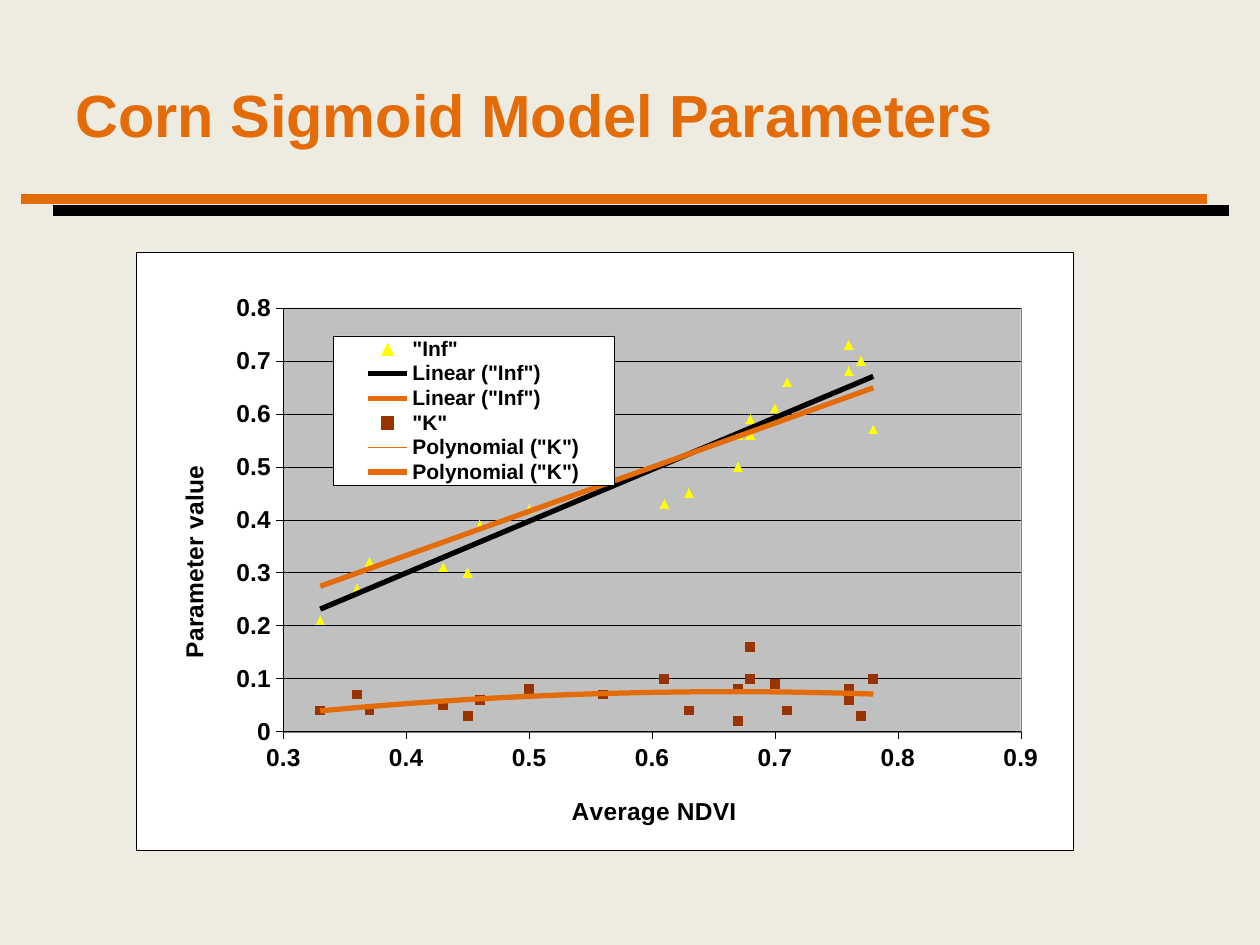
from lxml import etree
from pptx import Presentation
from pptx import util as u
from pptx.chart.data import XyChartData
from pptx.dml.color import RGBColor
from pptx.enum import chart as ch, shapes, text
from pptx.oxml import parse_xml
from pptx.oxml.ns import nsdecls, qn

COLORS = {"paper": "EEECE1", "orange": "E36C09", "black": "000000", "white": "FFFFFF",
          "plot": "C0C0C0", "edge": "808080", "yellow": "FFFF00", "rust": "993300"}
FONT = "Arial"
HAIRLINE = 0.25

NDVI = [0.33, 0.36, 0.37, 0.43, 0.45, 0.46, 0.5, 0.56, 0.61, 0.63,
        0.67, 0.67, 0.68, 0.68, 0.7, 0.71, 0.76, 0.76, 0.77, 0.78]
INF = [0.21, 0.27, 0.32, 0.31, 0.3, 0.39, 0.42, 0.52, 0.43, 0.45,
       0.56, 0.5, 0.56, 0.59, 0.61, 0.66, 0.68, 0.73, 0.7, 0.57]
K = [0.04, 0.07, 0.04, 0.05, 0.03, 0.06, 0.08, 0.07, 0.1, 0.04,
     0.02, 0.08, 0.16, 0.1, 0.09, 0.04, 0.06, 0.08, 0.03, 0.1]

# Trend lines: colour, width, type, settings of that type
LINEAR = [("black", 3, "linear", {}), ("orange", 3, "linear", {"intercept": 0})]
CURVES = [("orange", width, "poly", {"order": 2}) for width in (0.75, 3)]
SERIES = [('"Inf"', INF, "TRIANGLE", "yellow", LINEAR),
          ('"K"', K, "SQUARE", "rust", CURVES)]


def rgb(name):
    return RGBColor.from_string(COLORS[name])


def style_font(font, size, color="black"):
    font.name, font.size, font.bold = FONT, u.Pt(size), True
    font.color.rgb = rgb(color)


def style_line(line, color, width):
    line.color.rgb = rgb(color)
    line.width = u.Pt(width)


def chart_format(line, width, fill=None):
    """Shape properties for chart parts that have no public format."""
    def solid(name):
        return f'<a:solidFill><a:srgbClr val="{COLORS[name]}"/></a:solidFill>'
    inside = solid(fill) if fill else ""
    return parse_xml(f'<c:spPr {nsdecls("c", "a")}>{inside}'
                     f'<a:ln w="{u.Pt(width)}">{solid(line)}</a:ln></c:spPr>')


def layout(x, y, width=None, height=None, inner=False):
    """Manual layout, in shares of the chart."""
    target = '<c:layoutTarget val="inner"/>' if inner else ""
    modes = '<c:xMode val="edge"/><c:yMode val="edge"/>'
    sizes = "".join(f'<c:{tag} val="{value}"/>'
                    for tag, value in zip("xywh", (x, y, width, height))
                    if value is not None)
    return parse_xml(f'<c:layout {nsdecls("c")}><c:manualLayout>{target}{modes}{sizes}'
                     '</c:manualLayout></c:layout>')


def place(element, position, new_layout):
    for old in element.findall(qn("c:layout")):
        element.remove(old)
    element.insert(position, new_layout)


def add_trend(series, color, width, kind, settings):
    trend = parse_xml(f'<c:trendline {nsdecls("c")}/>')
    trend.append(chart_format(color, width))
    values = {"trendlineType": kind, **settings, "dispRSqr": 0, "dispEq": 0}
    for tag, value in values.items():
        etree.SubElement(trend, qn(f"c:{tag}")).set("val", str(value))
    series._element.find(qn("c:xVal")).addprevious(trend)


def style_axis(axis, title, low, high, title_place):
    axis.minimum_scale, axis.maximum_scale, axis.major_unit = low, high, 0.1
    axis.major_tick_mark = ch.XL_TICK_MARK.OUTSIDE
    axis.minor_tick_mark = ch.XL_TICK_MARK.NONE
    axis.tick_labels.number_format = "General"
    axis.tick_labels.number_format_is_linked = False
    style_font(axis.tick_labels.font, 14)
    style_line(axis.format.line, "black", HAIRLINE)
    run = axis.axis_title.text_frame.paragraphs[0].add_run()
    run.text = title
    style_font(run.font, 14)
    place(axis.axis_title._element, 1, layout(*title_place))


def add_header(slide, width, height):
    # Title
    title = slide.shapes.title
    title.left, title.top = int(0.05 * width), int(0.04 * height)
    title.width, title.height = int(0.79 * width), int(0.16 * height)
    frame = title.text_frame
    frame.vertical_anchor = text.MSO_ANCHOR.MIDDLE
    frame.auto_size = text.MSO_AUTO_SIZE.NONE
    paragraph = frame.paragraphs[0]
    paragraph.alignment = text.PP_ALIGN.LEFT
    run = paragraph.add_run()
    run.text = "Corn Sigmoid Model Parameters"
    style_font(run.font, 34, "orange")

    # Double rule under the title
    for color, start, end, y in (("orange", 0.17, 9.58, 1.58), ("black", 0.42, 9.75, 1.67)):
        rule = slide.shapes.add_connector(shapes.MSO_CONNECTOR.STRAIGHT, u.Inches(start),
                                          u.Inches(y), u.Inches(end), u.Inches(y))
        style_line(rule.line, color, 6)
        etree.SubElement(rule._element.spPr, qn("a:effectLst"))


def add_parameter_chart(slide, left, top, width, height):
    data = XyChartData()
    for name, values, *_ in SERIES:
        points = data.add_series(name)
        for x, y in zip(NDVI, values):
            points.add_data_point(x, y)
    chart = slide.shapes.add_chart(ch.XL_CHART_TYPE.XY_SCATTER, left, top,
                                   width, height, data).chart
    chart.has_title = False
    style_font(chart.font, 14)

    # Points and trend lines
    plot = chart.plots[0]
    plot.vary_by_categories = False
    for series, (_, _, marker, color, trends) in zip(plot.series, SERIES):
        series.smooth = False
        series.format.line.fill.background()
        series.marker.style = ch.XL_MARKER_STYLE[marker]
        series.marker.size = 5
        series.marker.format.fill.solid()
        series.marker.format.fill.fore_color.rgb = rgb(color)
        style_line(series.marker.format.line, color, HAIRLINE)
        for trend in trends:
            add_trend(series, *trend)

    # Axes
    style_axis(chart.category_axis, "Average NDVI", 0.3, 0.9, (0.46, 0.9))
    style_axis(chart.value_axis, "Parameter value", 0, 0.8, (0.04, 0.35))
    chart.category_axis.has_major_gridlines = False
    style_line(chart.value_axis.major_gridlines.format.line, "black", HAIRLINE)

    # Legend over the plot
    chart.has_legend = True
    legend = chart.legend
    legend.position = ch.XL_LEGEND_POSITION.RIGHT
    legend.include_in_layout = False
    style_font(legend.font, 12)
    place(legend._element, 1, layout(0.21, 0.14, 0.3, 0.25))
    legend._element.find(qn("c:overlay")).addnext(chart_format("black", HAIRLINE, "white"))

    # Plot area and frame
    space = chart._chartSpace.find(qn("c:chart"))
    area = space.find(qn("c:plotArea"))
    place(area, 0, layout(0.157, 0.093, 0.787, 0.709, inner=True))
    area.append(chart_format("edge", HAIRLINE, "plot"))
    space.addnext(chart_format("black", HAIRLINE, "white"))


def main():
    presentation = Presentation()
    presentation.slide_width, presentation.slide_height = u.Inches(10), u.Inches(7.5)
    slide = presentation.slides.add_slide(presentation.slide_layouts[5])
    slide.background.fill.solid()
    slide.background.fill.fore_color.rgb = rgb("paper")
    add_header(slide, presentation.slide_width, presentation.slide_height)
    add_parameter_chart(slide, u.Inches(1.08), u.Inches(2), u.Inches(7.44), u.Inches(4.75))
    presentation.save("out.pptx")


if __name__ == "__main__":
    main()
